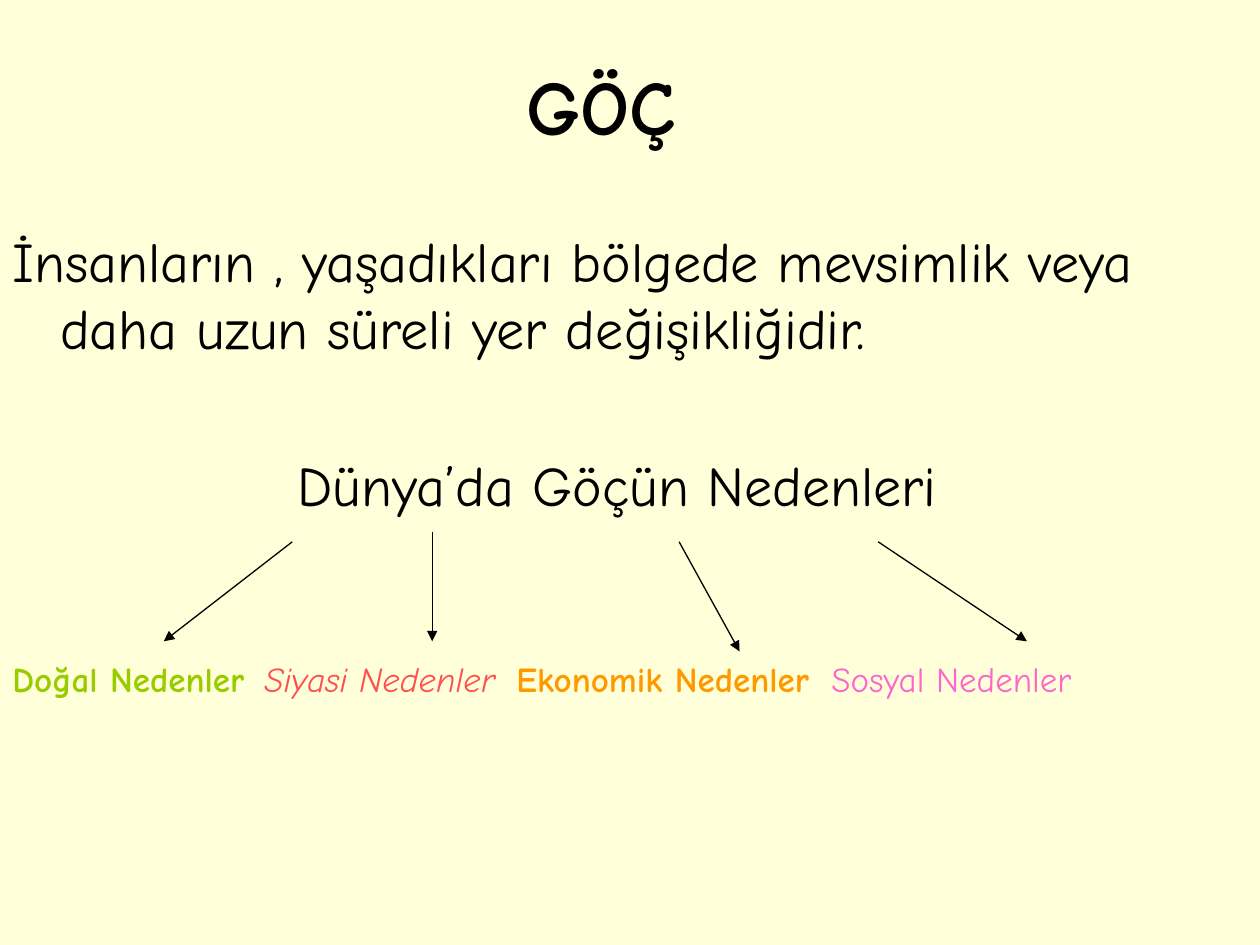
from dataclasses import dataclass

from lxml import etree
from pptx import Presentation
from pptx.dml.color import RGBColor
from pptx.enum.shapes import MSO_CONNECTOR
from pptx.enum.text import MSO_ANCHOR, PP_ALIGN
from pptx.oxml.ns import qn
from pptx.util import Inches, Pt

STRAIGHT = MSO_CONNECTOR.STRAIGHT
MIDDLE = MSO_ANCHOR.MIDDLE
LEFT, CENTER = PP_ALIGN.LEFT, PP_ALIGN.CENTER
TITLE_ONLY = 5


@dataclass(frozen=True)
class Theme:
    font: str = "Comic Neue"
    background: str = "FFFFD9"
    ink: str = "000000"
    natural: str = "99CC00"
    political: str = "FF5050"
    economic: str = "FF9900"
    social: str = "FF66CC"
    title_size: int = 44
    body_size: int = 32
    cause_size: int = 20
    line_width: float = 0.75


class SlideBuilder:
    def __init__(self, prs, theme):
        self.theme = theme
        self.slide = prs.slides.add_slide(prs.slide_layouts[TITLE_ONLY])
        fill = self.slide.background.fill
        fill.solid()
        fill.fore_color.rgb = RGBColor.from_string(theme.background)

    def run(self, paragraph, text, size, color=None, bold=False, italic=False):
        run = paragraph.add_run()
        run.text = text
        font = run.font
        font.name, font.size = self.theme.font, Pt(size)
        font.bold, font.italic = bold, italic
        font.color.rgb = RGBColor.from_string(color or self.theme.ink)

    def title(self, text, left, top, width, height):
        title = self.slide.shapes.title
        title.left, title.top = Inches(left), Inches(top)
        title.width, title.height = Inches(width), Inches(height)
        title.text_frame.vertical_anchor = MIDDLE
        paragraph = title.text_frame.paragraphs[0]
        paragraph.alignment = CENTER
        self.run(paragraph, text, self.theme.title_size, bold=True)

    def text_box(self, left, top, width, height):
        box = self.slide.shapes.add_textbox(
            Inches(left), Inches(top), Inches(width), Inches(height))
        box.text_frame.word_wrap = True
        return box.text_frame

    def paragraph(self, frame, space_before, align=LEFT, hanging=0, tabs=()):
        first = frame.paragraphs[0]
        paragraph = frame.add_paragraph() if first.runs else first
        paragraph.alignment = align
        paragraph.space_before = Pt(space_before)
        properties = paragraph._p.get_or_add_pPr()
        properties.set("marL", str(Inches(hanging)))
        properties.set("indent", str(-Inches(hanging)))
        if tabs:
            tab_list = etree.SubElement(properties, qn("a:tabLst"))
            for position in tabs:
                etree.SubElement(tab_list, qn("a:tab"),
                                 pos=str(Inches(position)), algn="l")
        return paragraph

    def arrow(self, start, end):
        points = [Inches(value) for value in (*start, *end)]
        arrow = self.slide.shapes.add_connector(STRAIGHT, *points)
        arrow.line.color.rgb = RGBColor.from_string(self.theme.ink)
        arrow.line.width = Pt(self.theme.line_width)
        etree.SubElement(arrow.line._get_or_add_ln(), qn("a:tailEnd"), type="triangle")
        etree.SubElement(arrow._element.spPr, qn("a:effectLst"))


def main():
    prs = Presentation()
    prs.slide_width, prs.slide_height = Inches(10), Inches(7.5)
    theme = Theme()
    builder = SlideBuilder(prs, theme)

    # Title
    builder.title("GÖÇ", 0.27, 0.21, 9, 1.25)

    # Definition and heading of the causes
    body = builder.text_box(0, 1.75, 9.8, 5.75)
    definition = builder.paragraph(body, 6.4, hanging=0.38)
    builder.run(definition, "İnsanların , yaşadıkları bölgede mevsimlik veya "
                "daha uzun süreli yer değişikliğidir.", theme.body_size)
    heading = builder.paragraph(body, 51, CENTER, hanging=0.38)
    builder.run(heading, "Dünya’da Göçün Nedenleri", theme.body_size)

    # Four causes, set on tab stops
    causes = builder.paragraph(body, 80, tabs=(2.11, 4.23, 6.74))
    for text, color, bold, italic in (
        ("Doğal Nedenler\t", theme.natural, True, False),
        ("Siyasi Nedenler\t", theme.political, False, True),
        ("Ekonomik Nedenler\t", theme.economic, True, False),
        ("Sosyal Nedenler", theme.social, False, False),
    ):
        builder.run(causes, text, theme.cause_size, color, bold, italic)

    # Arrows from the heading to each cause
    for start, end in (
        ((2.32, 4.3), (1.3, 5.09)),
        ((3.43, 4.22), (3.43, 5.09)),
        ((5.39, 4.3), (5.87, 5.17)),
        ((6.97, 4.3), (8.15, 5.09)),
    ):
        builder.arrow(start, end)

    prs.save("out.pptx")


if __name__ == "__main__":
    main()
